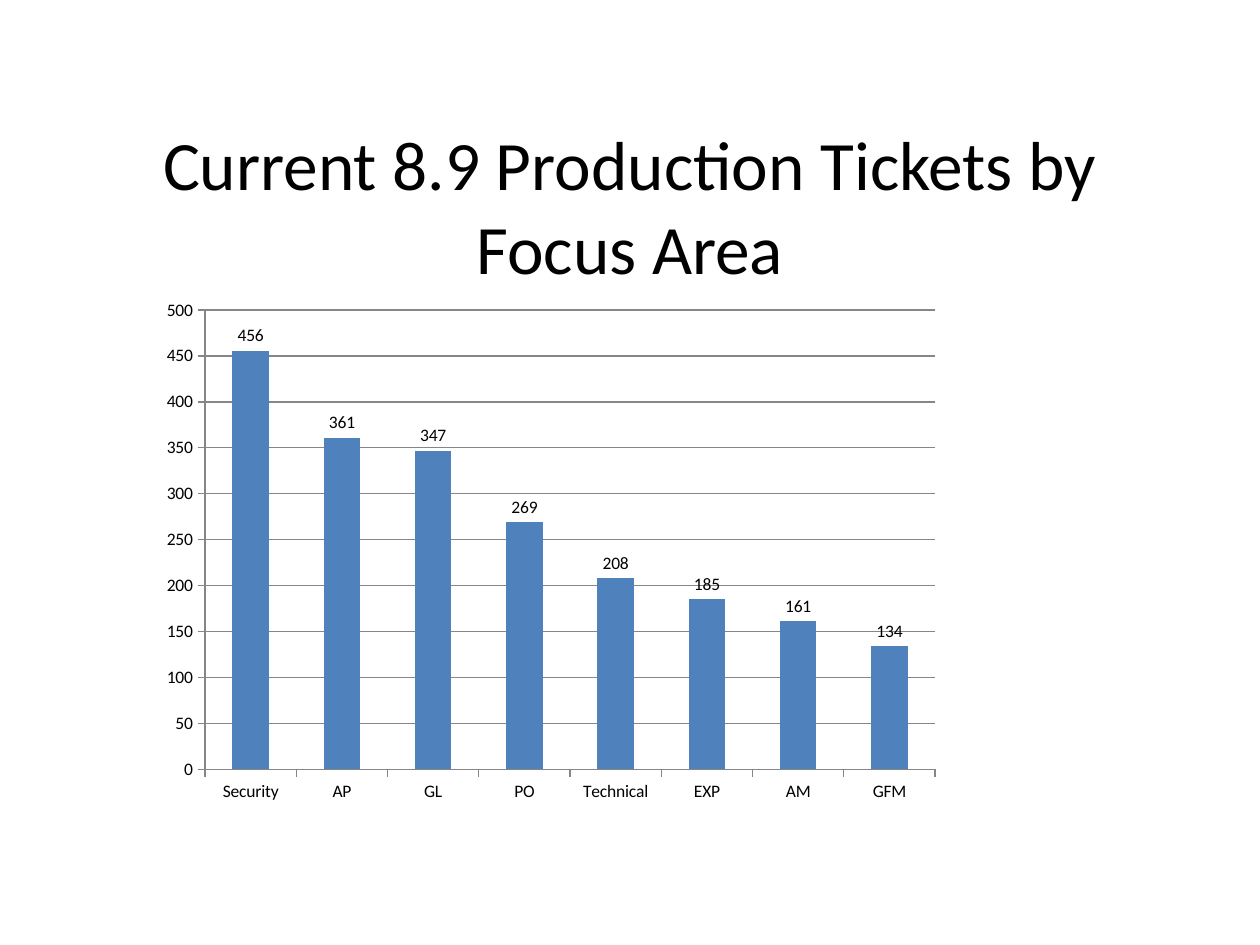
from dataclasses import dataclass

from lxml.etree import SubElement
from pptx import Presentation
from pptx.chart.data import CategoryChartData
from pptx.dml.color import RGBColor
from pptx.enum.chart import XL_CHART_TYPE, XL_LABEL_POSITION, XL_TICK_MARK
from pptx.enum.text import MSO_ANCHOR, PP_ALIGN
from pptx.oxml.ns import qn
from pptx.slide import Slide
from pptx.util import Inches, Pt

COLORS = {"text": "000000", "bar": "4F81BD", "line": "868686"}
FONT = "Calibri"


@dataclass
class Area:
    name: str
    count: int


AREAS = [
    Area("Security", 456),
    Area("AP", 361),
    Area("GL", 347),
    Area("PO", 269),
    Area("Technical", 208),
    Area("EXP", 185),
    Area("AM", 161),
    Area("GFM", 134),
]
PLOT = {"x": 0.07, "y": 0.03, "w": 0.74, "h": 0.83}


def color(key: str) -> RGBColor:
    return RGBColor.from_string(COLORS[key])


def style(font, size: float) -> None:
    font.name = FONT
    font.size = Pt(size)
    font.color.rgb = color("text")


def stroke(line) -> None:
    line.color.rgb = color("line")
    line.width = Pt(0.75)


def add_title(slide: Slide, text: str) -> None:
    box = slide.shapes.add_textbox(Inches(0.5), Inches(1), Inches(9), Inches(1.25))
    frame = box.text_frame
    frame.word_wrap = True
    frame.vertical_anchor = MSO_ANCHOR.MIDDLE
    para = frame.paragraphs[0]
    para.text = text
    para.alignment = PP_ALIGN.CENTER
    style(para.font, 39.6)


def place_plot(chart) -> None:
    area = chart._chartSpace.chart.plotArea
    for old in area.findall(qn("c:layout")):
        area.remove(old)
    layout = SubElement(area, qn("c:layout"))
    area.insert(0, layout)
    manual = SubElement(layout, qn("c:manualLayout"))
    rules = {"layoutTarget": "inner", "xMode": "edge", "yMode": "edge", **PLOT}
    for tag, val in rules.items():
        SubElement(manual, qn(f"c:{tag}")).set("val", str(val))


def add_bars(slide: Slide, areas: list[Area]) -> None:
    data = CategoryChartData()
    data.categories = [area.name for area in areas]
    data.add_series("Series 1", [area.count for area in areas])
    chart = slide.shapes.add_chart(
        XL_CHART_TYPE.COLUMN_CLUSTERED,
        Inches(1.08), Inches(2.33), Inches(7.83), Inches(4.39), data,
    ).chart
    chart.has_legend = False
    chart.has_title = False
    style(chart.font, 10)
    for axis in (chart.category_axis, chart.value_axis):
        axis.major_tick_mark = XL_TICK_MARK.OUTSIDE
        axis.minor_tick_mark = XL_TICK_MARK.NONE
        stroke(axis.format.line)
    scale = chart.value_axis
    scale.minimum_scale = 0
    scale.maximum_scale = 500
    scale.major_unit = 50
    scale.has_major_gridlines = True
    stroke(scale.major_gridlines.format.line)
    plot = chart.plots[0]
    plot.gap_width = 150
    plot.vary_by_categories = False
    fill = plot.series[0].format.fill
    fill.solid()
    fill.fore_color.rgb = color("bar")
    labels = plot.series[0].data_labels
    labels.show_value = True
    labels.position = XL_LABEL_POSITION.OUTSIDE_END
    style(labels.font, 10)
    place_plot(chart)


def main() -> None:
    """Build the ticket slide and save it."""
    deck = Presentation()
    deck.slide_width = Inches(10)
    deck.slide_height = Inches(7.5)
    slide = deck.slides.add_slide(deck.slide_layouts[6])
    add_title(slide, "Current 8.9 Production Tickets by Focus Area")
    add_bars(slide, AREAS)
    deck.save("out.pptx")


if __name__ == "__main__":
    main()
